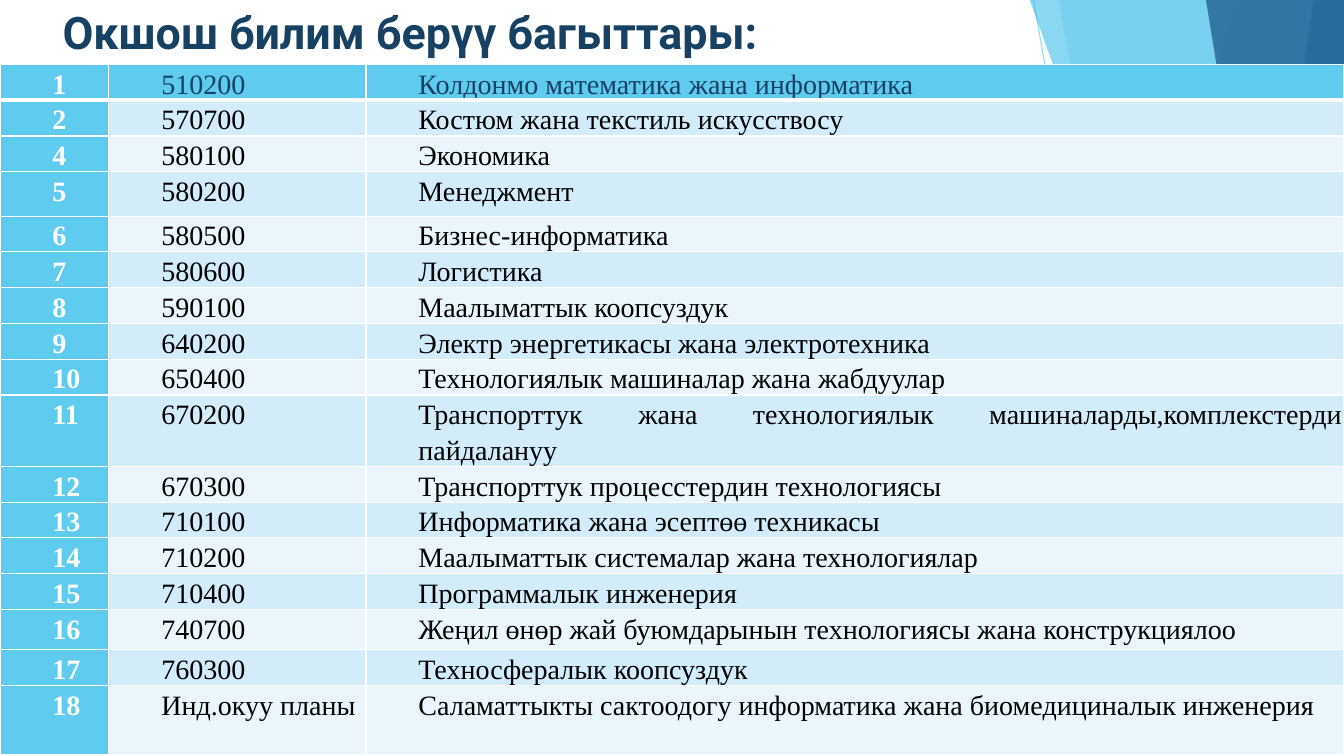
from dataclasses import dataclass

from lxml import etree
from pptx import Presentation
from pptx import util as u
from pptx.dml.color import RGBColor
from pptx.enum import shapes, text
from pptx.oxml import ns

COLORS = {
    "sky": "5FCBEF",
    "azure": "17B0E4",
    "blue": "2E83C3",
    "navy": "226292",
    "ink": "174162",
    "white": "FFFFFF",
    "black": "000000",
    "band_dark": "D2ECF9",
    "band_light": "EAF6FC",
}
TOP, BOTTOM, RIGHT = -0.01, 7.5, 13.33


@dataclass
class Ray:
    start: tuple[float, float]
    end: tuple[float, float]


@dataclass
class Panel:
    top_x: float
    bottom_x: float
    color: str
    opacity: int


@dataclass
class Wedge:
    left: float
    top: float
    width: float
    apex: float
    color: str
    opacity: int


@dataclass
class Program:
    number: str
    code: str
    title: str
    height: float = 0.34


DECOR = [
    Ray((10.25, 0), (11.58, BOTTOM)),
    Ray((RIGHT, 4.03), (8.12, BOTTOM)),
    Panel(12.28, 10.04, "sky", 36),
    Panel(10.5, 11.83, "sky", 20),
    Wedge(9.77, 3.33, 3.56, 1, "azure", 66),
    Panel(10.21, 12.91, "azure", 50),
    Panel(13.03, 11.92, "blue", 70),
    Panel(11.96, 13.18, "navy", 80),
    Wedge(11.34, 3.93, 1.99, 1, "azure", 66),
    Wedge(0, 4.39, 0.49, 0, "sky", 70),
]
PROGRAMS = [
    Program("1", "510200", "Колдонмо математика жана информатика"),
    Program("2", "570700", "Костюм жана текстиль искусствосу"),
    Program("4", "580100", "Экономика"),
    Program("5", "580200", "Менеджмент", 0.44),
    Program("6", "580500", "Бизнес-информатика"),
    Program("7", "580600", "Логистика"),
    Program("8", "590100", "Маалыматтык коопсуздук"),
    Program("9", "640200", "Электр энергетикасы жана электротехника"),
    Program("10", "650400", "Технологиялык машиналар жана жабдуулар"),
    Program("11", "670200", "Транспорттук жана технологиялык машиналарды,комплекстерди пайдалануу", 0.4),
    Program("12", "670300", "Транспорттук процесстердин технологиясы"),
    Program("13", "710100", "Информатика жана эсептөө техникасы"),
    Program("14", "710200", "Маалыматтык системалар жана технологиялар"),
    Program("15", "710400", "Программалык инженерия"),
    Program("16", "740700", "Жеңил өнөр жай буюмдарынын технологиясы жана конструкциялоо", 0.4),
    Program("17", "760300", "Техносфералык коопсуздук"),
    Program("18", "Инд.окуу планы", "Саламаттыкты сактоодогу информатика жана биомедициналык инженерия", 0.69),
]
COLUMN_WIDTHS = [1.08, 2.55, 9.7]


def rgb(name: str) -> RGBColor:
    return RGBColor.from_string(COLORS[name])


def set_opacity(fill_owner, opacity: int) -> None:
    tint = next(fill_owner.iter(ns.qn("a:srgbClr")))
    etree.SubElement(tint, ns.qn("a:alpha")).set("val", str(opacity * 1000))


def paint(shape, color: str, opacity: int) -> None:
    shape.shadow.inherit = False
    shape.line.fill.background()
    shape.fill.solid()
    shape.fill.fore_color.rgb = rgb(color)
    set_opacity(shape.fill._xPr, opacity)


def draw_ray(slide, ray: Ray) -> None:
    ends = [u.Inches(value) for value in (*ray.start, *ray.end)]
    connector = slide.shapes.add_connector(shapes.MSO_CONNECTOR.STRAIGHT, *ends)
    connector.line.color.rgb = rgb("sky")
    connector.line.width = u.Pt(0.75)
    properties = connector._element.spPr
    set_opacity(properties, 70)
    etree.SubElement(properties, ns.qn("a:effectLst"))


def draw_panel(slide, panel: Panel) -> None:
    corners = [(RIGHT, TOP), (RIGHT, BOTTOM), (panel.bottom_x, BOTTOM)]
    outline = slide.shapes.build_freeform(u.Inches(panel.top_x), u.Inches(TOP))
    outline.add_line_segments([(u.Inches(x), u.Inches(y)) for x, y in corners])
    paint(outline.convert_to_shape(), panel.color, panel.opacity)


def draw_wedge(slide, wedge: Wedge) -> None:
    box = (wedge.left, wedge.top, wedge.width, BOTTOM - wedge.top)
    triangle = slide.shapes.add_shape(
        shapes.MSO_SHAPE.ISOSCELES_TRIANGLE, *[u.Inches(value) for value in box]
    )
    triangle.adjustments[0] = wedge.apex
    paint(triangle, wedge.color, wedge.opacity)


def write_title(slide, wording: str) -> None:
    title = slide.shapes.title
    title.left, title.top = u.Inches(0.52), u.Inches(0)
    title.width, title.height = u.Inches(9.4), u.Inches(1.44)
    frame = title.text_frame
    frame.text = wording
    frame.word_wrap = True
    frame.auto_size = text.MSO_AUTO_SIZE.NONE
    frame.vertical_anchor = text.MSO_ANCHOR.TOP
    heading = frame.paragraphs[0]
    heading.alignment = text.PP_ALIGN.LEFT
    font = heading.runs[0].font
    font.name, font.size, font.bold = "Roboto", u.Pt(32), True
    font.color.rgb = rgb("ink")


def set_borders(cell, top: float, bottom: float) -> None:
    properties = cell._tc.get_or_add_tcPr()
    widths = {"a:lnL": 1, "a:lnR": 1, "a:lnT": top, "a:lnB": bottom}
    for position, (tag, width) in enumerate(widths.items()):
        border = etree.Element(ns.qn(tag), w=str(u.Pt(width)))
        fill = etree.SubElement(border, ns.qn("a:solidFill"))
        etree.SubElement(fill, ns.qn("a:srgbClr")).set("val", COLORS["white"])
        properties.insert(position, border)


def write_cell(cell, wording: str, fill: str, color: str, bold: bool) -> None:
    cell.fill.solid()
    cell.fill.fore_color.rgb = rgb(fill)
    cell.margin_left = cell.margin_right = u.Inches(0.02)
    cell.margin_top = cell.margin_bottom = u.Inches(0)
    cell.text_frame.text = wording
    entry = cell.text_frame.paragraphs[0]
    entry.alignment = text.PP_ALIGN.JUSTIFY
    entry.line_spacing = 1.15
    entry._p.get_or_add_pPr().set("marL", str(u.Inches(0.5)))
    entry._p.get_or_add_pPr().set("indent", "0")
    font = entry.runs[0].font
    font.name, font.size, font.bold = "Times New Roman", u.Pt(20), bold
    font.color.rgb = rgb(color)


def draw_programs(slide, programs: list[Program]) -> None:
    height = sum(program.height for program in programs)
    table = slide.shapes.add_table(
        len(programs), len(COLUMN_WIDTHS),
        u.Inches(0), u.Inches(0.64), u.Inches(RIGHT), u.Inches(height),
    ).table
    table.first_row = table.horz_banding = False
    for column, width in zip(table.columns, COLUMN_WIDTHS):
        column.width = u.Inches(width)
    for index, program in enumerate(programs):
        table.rows[index].height = u.Inches(program.height)
        band = "sky" if index == 0 else ("band_light", "band_dark")[index % 2]
        color = "ink" if index == 0 else "black"
        number, code, name = table.rows[index].cells
        write_cell(number, program.number, "sky", "white", True)
        write_cell(code, program.code, band, color, False)
        write_cell(name, program.title, band, color, False)
        for cell in (number, code, name):
            set_borders(cell, 3 if index == 1 else 1, 3 if index == 0 else 1)


def main() -> None:
    deck = Presentation()
    deck.slide_width, deck.slide_height = u.Inches(RIGHT), u.Inches(BOTTOM)
    slide = deck.slides.add_slide(deck.slide_layouts[5])
    painters = {Ray: draw_ray, Panel: draw_panel, Wedge: draw_wedge}
    for item in DECOR:
        painters[type(item)](slide, item)
    write_title(slide, "Окшош билим берүү багыттары:")
    draw_programs(slide, PROGRAMS)
    deck.save("out.pptx")


if __name__ == "__main__":
    main()
